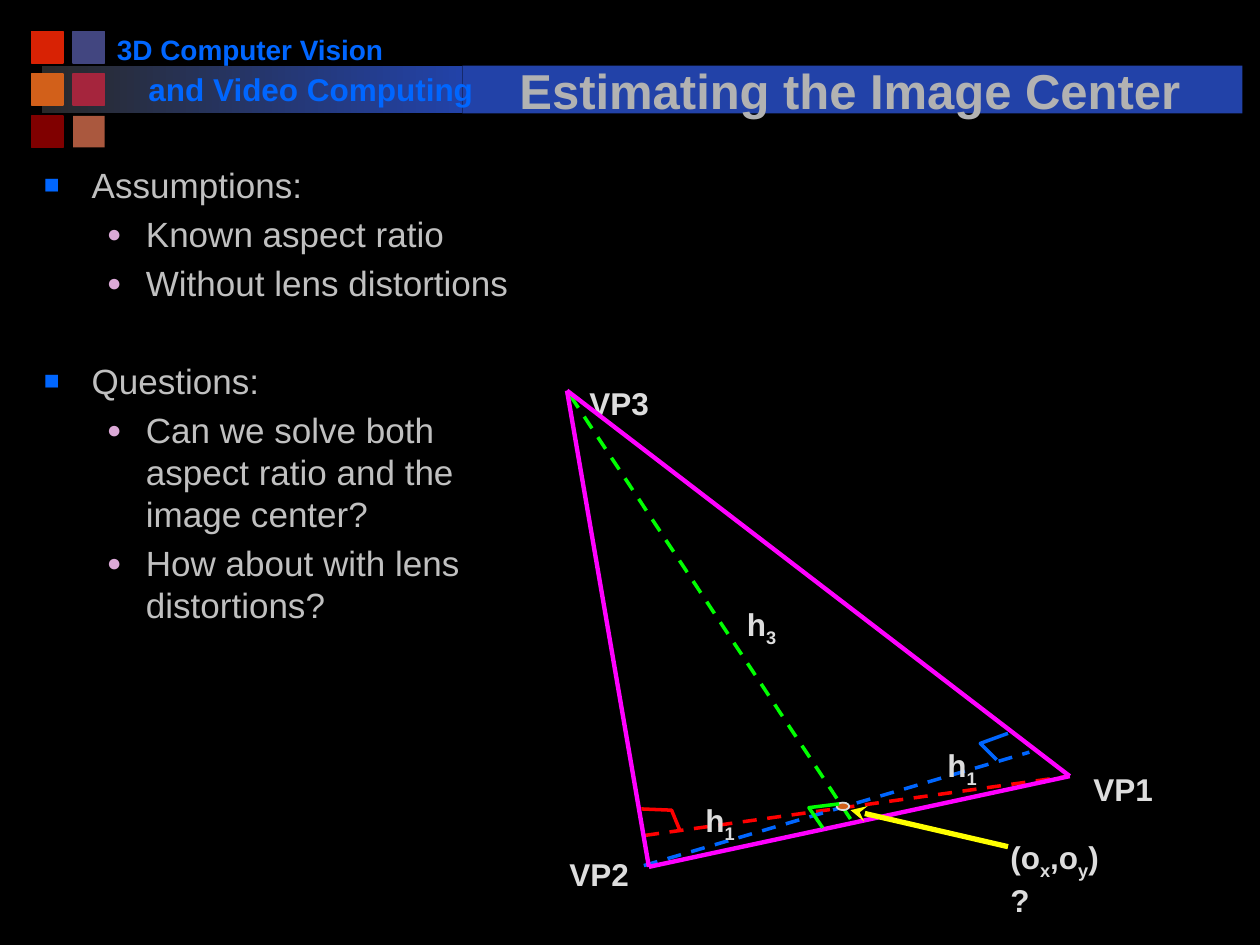
from lxml import etree
from pptx import Presentation
from pptx.dml.color import RGBColor
from pptx.enum.dml import MSO_LINE
from pptx.enum.shapes import MSO_CONNECTOR, MSO_SHAPE
from pptx.enum.text import MSO_ANCHOR, PP_ALIGN
from pptx.oxml.ns import qn
from pptx.util import Inches, Pt

RECT, OVAL = MSO_SHAPE.RECTANGLE, MSO_SHAPE.OVAL
STRAIGHT, DASH = MSO_CONNECTOR.STRAIGHT, MSO_LINE.DASH
FONT = "Arial"
BLUE, RED, GREEN, MAGENTA = "0066FF", "FF0000", "00FF00", "FF00FF"
BAND, LABEL, BODY = "2242A8", "DDDDDD", "C0C0C0"

# Content
TITLE = "Estimating the Image Center"
COURSE = [("3D Computer Vision", 16, (0.83, 0.21, 2.32, 0.37)),
          ("and Video Computing", 18, (1.08, 0.51, 2.83, 0.4))]
SQUARES = [("D82204", "424680"), ("D2601A", "A5253D"), ("800000", "AA583E")]
OUTLINE = [
    ("Assumptions:", ["Known aspect ratio", "Without lens distortions"]),
    ("Questions:", ["Can we solve both aspect ratio and the image center?",
                    "How about with lens distortions?"]),
]
# Bullet by level: character, colour, size %, left margin, hanging indent
BULLETS = [("■", BLUE, 75, 0.38, 0.38), ("●", "DBA9D7", 70, 0.81, 0.31)]

# Triangle of vanishing points and its altitudes
VP1, VP2, VP3 = (8.49, 6.16), (5.15, 6.88), (4.5, 3.1)
ALTITUDES = [(RED, (5.12, 6.63), VP1), (BLUE, (5.11, 6.87), (8.17, 5.97)),
             (GREEN, (6.75, 6.5), VP3)]
SIDES = [(VP3, VP2), (VP3, VP1), (VP2, VP1)]
RIGHT_ANGLES = [(BLUE, [(8, 5.82), (7.78, 5.9), (7.91, 6.03)]),
                (GREEN, [(6.66, 6.38), (6.42, 6.41), (6.53, 6.57)]),
                (RED, [(5.4, 6.6), (5.33, 6.43), (5.09, 6.42)])]
# Labels: pieces alternate between normal text and subscript
VP_LABELS = [(["VP1"], (8.58, 6.06, 0.92, 0.4)),
             (["VP2"], (4.42, 6.74, 0.74, 0.4)),
             (["VP3"], (4.58, 3, 0.74, 0.4))]
MATH_LABELS = [(["h", "3"], (5.83, 4.75, 0.67, 0.4)),
               (["h", "1"], (5.5, 6.31, 0.67, 0.4)),
               (["h", "1"], (7.42, 5.87, 0.67, 0.4)),
               (["(o", "x", ",o", "y", ") ?"], (7.92, 6.6, 1.08, 0.7))]


def rgb(color):
    return RGBColor.from_string(color)


def child(parent, tag, **attrs):
    return etree.SubElement(parent, qn(tag), attrs)


def add_box(kind, at, fill, line=None):
    sp = s.shapes.add_shape(kind, *map(Inches, at))
    sp.shadow.inherit = False
    sp.fill.solid()
    sp.fill.fore_color.rgb = rgb(fill)
    if line:
        sp.line.color.rgb = rgb(line)
        sp.line.width = Pt(1)
    else:
        sp.line.fill.background()
    return sp


def add_line(start, end, color, width, dash=None):
    sp = s.shapes.add_connector(STRAIGHT, *map(Inches, start + end))
    sp.line.color.rgb = rgb(color)
    sp.line.width = Pt(width)
    if dash:
        sp.line.dash_style = dash
    child(sp._element.spPr, "a:effectLst")
    return sp


def add_text(at):
    tf = s.shapes.add_textbox(*map(Inches, at)).text_frame
    tf.word_wrap = True
    return tf


def add_run(p, text, size, color, bold=True):
    r = p.add_run()
    r.text = text
    r.font.name, r.font.size, r.font.bold = FONT, Pt(size), bold
    r.font.color.rgb = rgb(color)
    return r


def add_label(pieces, at):
    p = add_text(at).paragraphs[0]
    for i, piece in enumerate(pieces):
        r = add_run(p, piece, 18, LABEL)
        if i % 2:
            r.font._element.set("baseline", "-25000")


def add_bullet(p, level, text, before):
    char, color, size, margin, hang = BULLETS[level]
    p.level = level
    p.line_spacing, p.space_before = Pt(24), Pt(before)
    pPr = p._p.get_or_add_pPr()
    pPr.set("marL", str(Inches(margin)))
    pPr.set("indent", str(-Inches(hang)))
    child(child(pPr, "a:buClr"), "a:srgbClr", val=color)
    child(pPr, "a:buSzPct", val=str(size * 1000))
    child(pPr, "a:buFont", typeface=FONT)
    child(pPr, "a:buChar", char=char)
    add_run(p, text, 20, BODY, False)


prs = Presentation()
prs.slide_width, prs.slide_height = Inches(10), Inches(7.5)
s = prs.slides.add_slide(prs.slide_layouts[6])
s.background.fill.solid()
s.background.fill.fore_color.rgb = rgb("000000")

# Header band and colour squares
fade = add_box(RECT, (0.33, 0.52, 3.34, 0.38), BAND)
fade.fill.gradient()
fade.fill.gradient_angle = 0
for stop, color, position in zip(fade.fill.gradient_stops, ("292929", BAND), (0, 1)):
    stop.color.rgb = rgb(color)
    stop.position = position
for row, colors in enumerate(SQUARES):
    for col, color in enumerate(colors):
        at = (0.25 + col * 0.33, 0.25 + row * 0.335, 0.25, 0.25)
        add_box(RECT, at, color, None if color == "AA583E" else color)
add_box(RECT, (3.67, 0.52, 6.19, 0.38), BAND)
for text, size, at in COURSE:
    add_run(add_text(at).paragraphs[0], text, size, BLUE)

# Title with its text shadow
tf = add_text((3.83, 0.5, 5.83, 0.5))
tf.vertical_anchor = MSO_ANCHOR.BOTTOM
p = tf.paragraphs[0]
p.alignment = PP_ALIGN.CENTER
r = add_run(p, TITLE, 28, "B2B2B2")
effects = etree.Element(qn("a:effectLst"))
shadow = child(effects, "a:outerShdw", dist="35921", dir="2700000", algn="ctr")
child(shadow, "a:srgbClr", val="000000")
r.font._element.find(qn("a:solidFill")).addnext(effects)

# Outline text
tf = add_text((0.25, 1.25, 4.17, 5.92))
p = tf.paragraphs[0]
for i, (heading, points) in enumerate(OUTLINE):
    if i:
        p = tf.add_paragraph()
    add_bullet(p, 0, heading, 32 if i else 0)
    for point in points:
        add_bullet(tf.add_paragraph(), 1, point, 4)

# Triangle diagram
for label in VP_LABELS:
    add_label(*label)
for color, start, end in ALTITUDES:
    add_line(start, end, color, 2, DASH)
for start, end in SIDES:
    add_line(start, end, MAGENTA, 2.5)
add_box(OVAL, (6.64, 6.37, 0.1, 0.06), "D2601A", LABEL)
for color, points in RIGHT_ANGLES:
    corners = [tuple(map(Inches, pt)) for pt in points]
    fb = s.shapes.build_freeform(*corners[0])
    fb.add_line_segments(corners[1:], close=False)
    sp = fb.convert_to_shape()
    sp.shadow.inherit = False
    sp.fill.background()
    sp.line.color.rgb = rgb(color)
    sp.line.width = Pt(2)
for label in MATH_LABELS:
    add_label(*label)
arrow = add_line((8, 6.72), (6.75, 6.43), "FFFF00", 3)
child(arrow.line._get_or_add_ln(), "a:tailEnd", type="stealth")

prs.save("out.pptx")
